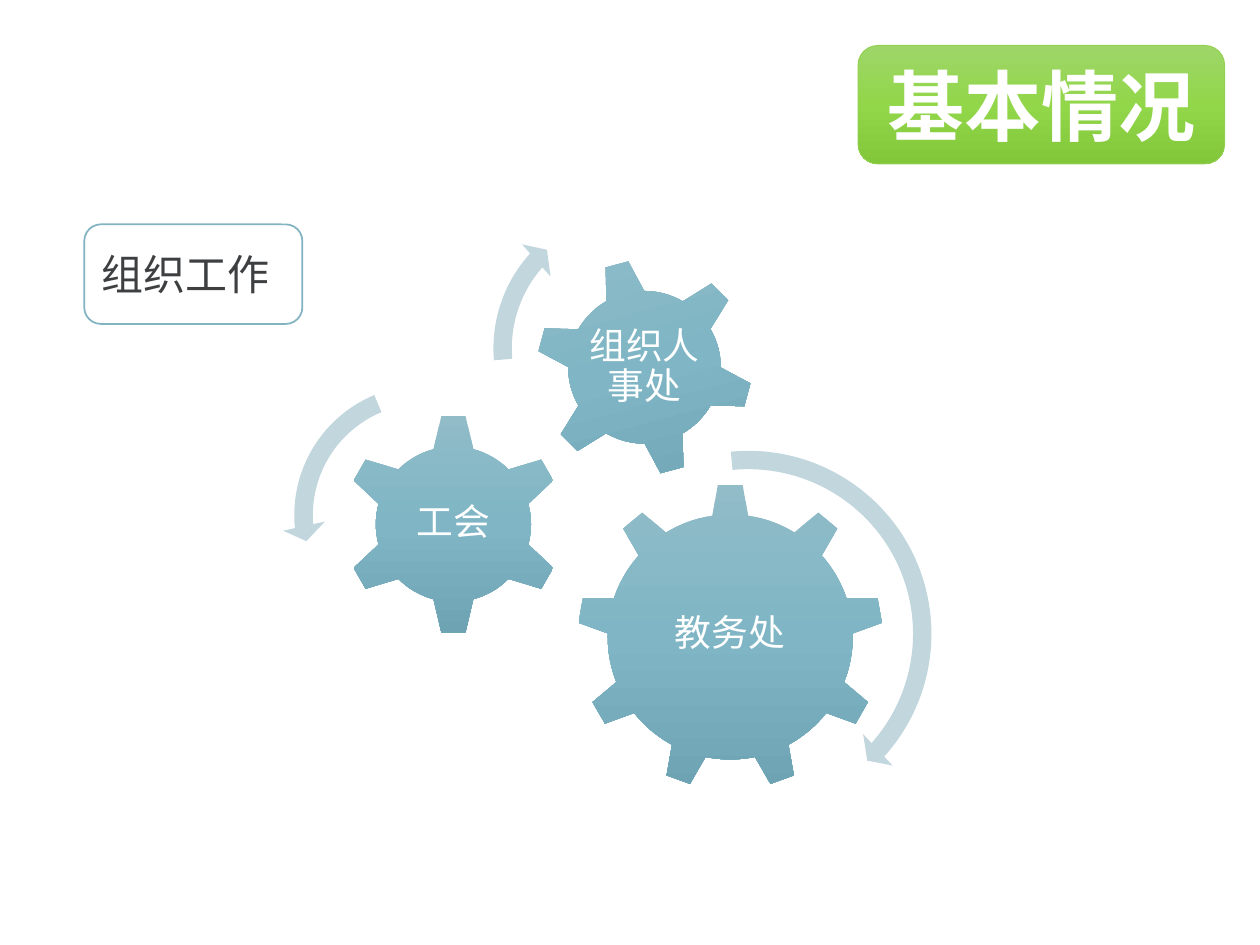
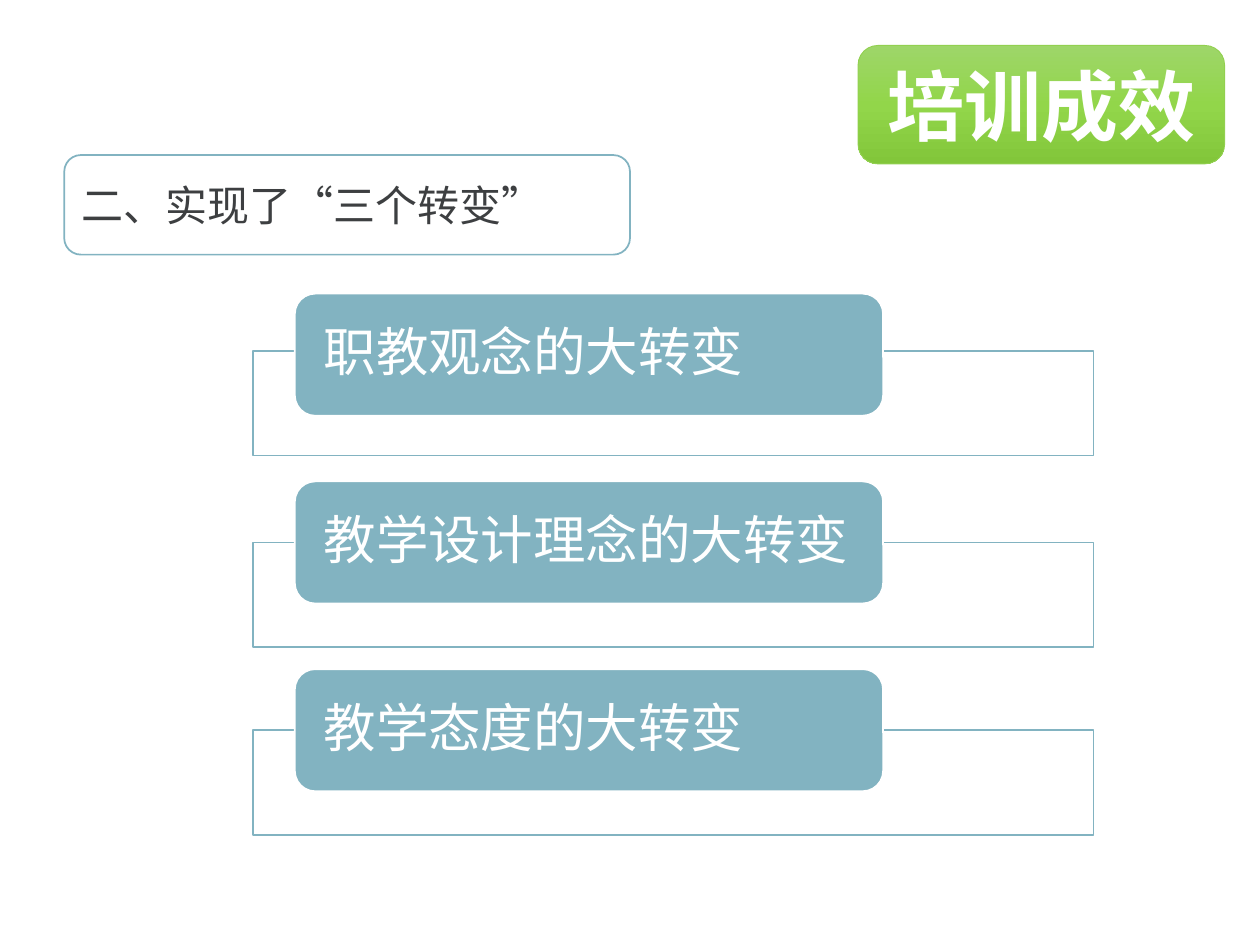
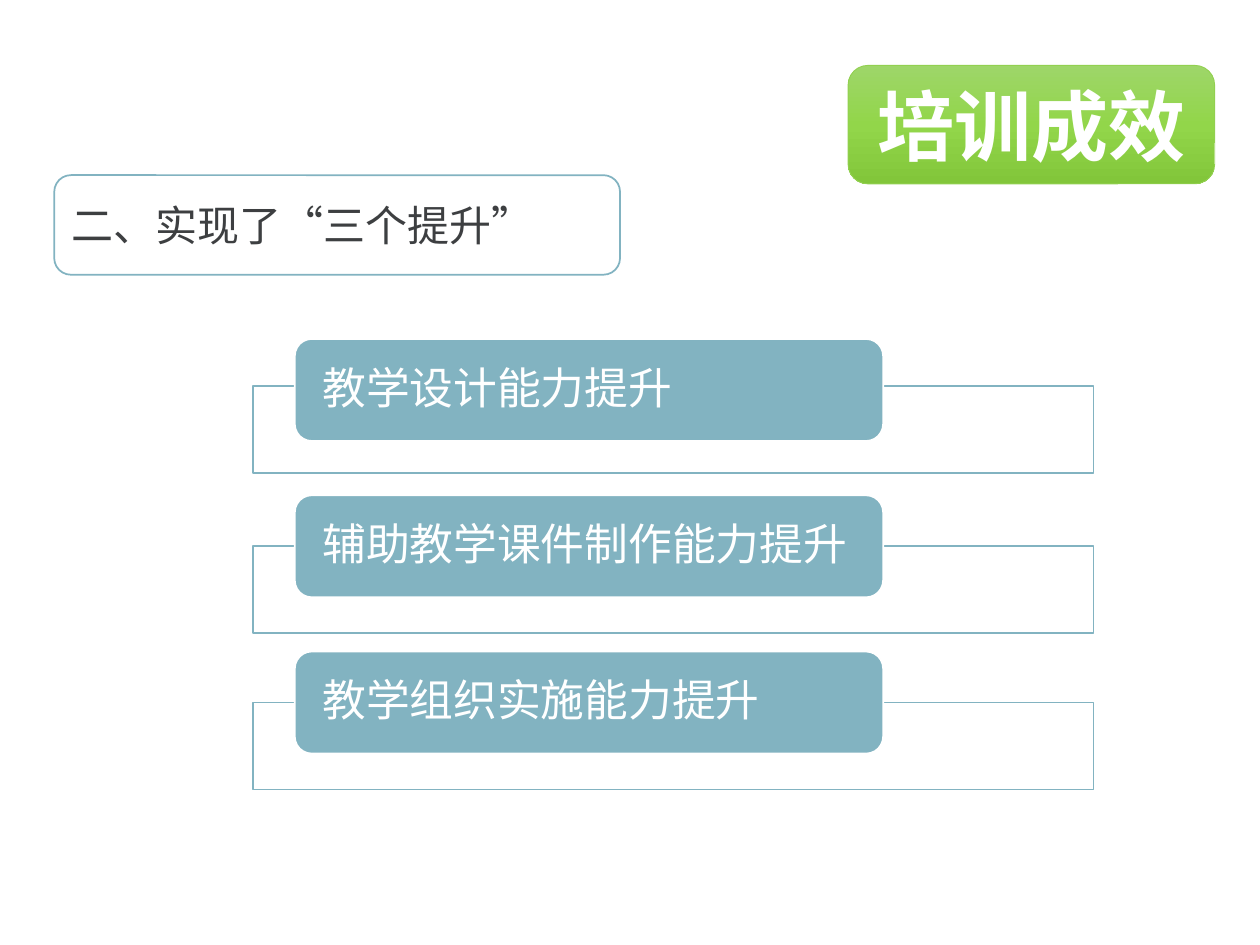
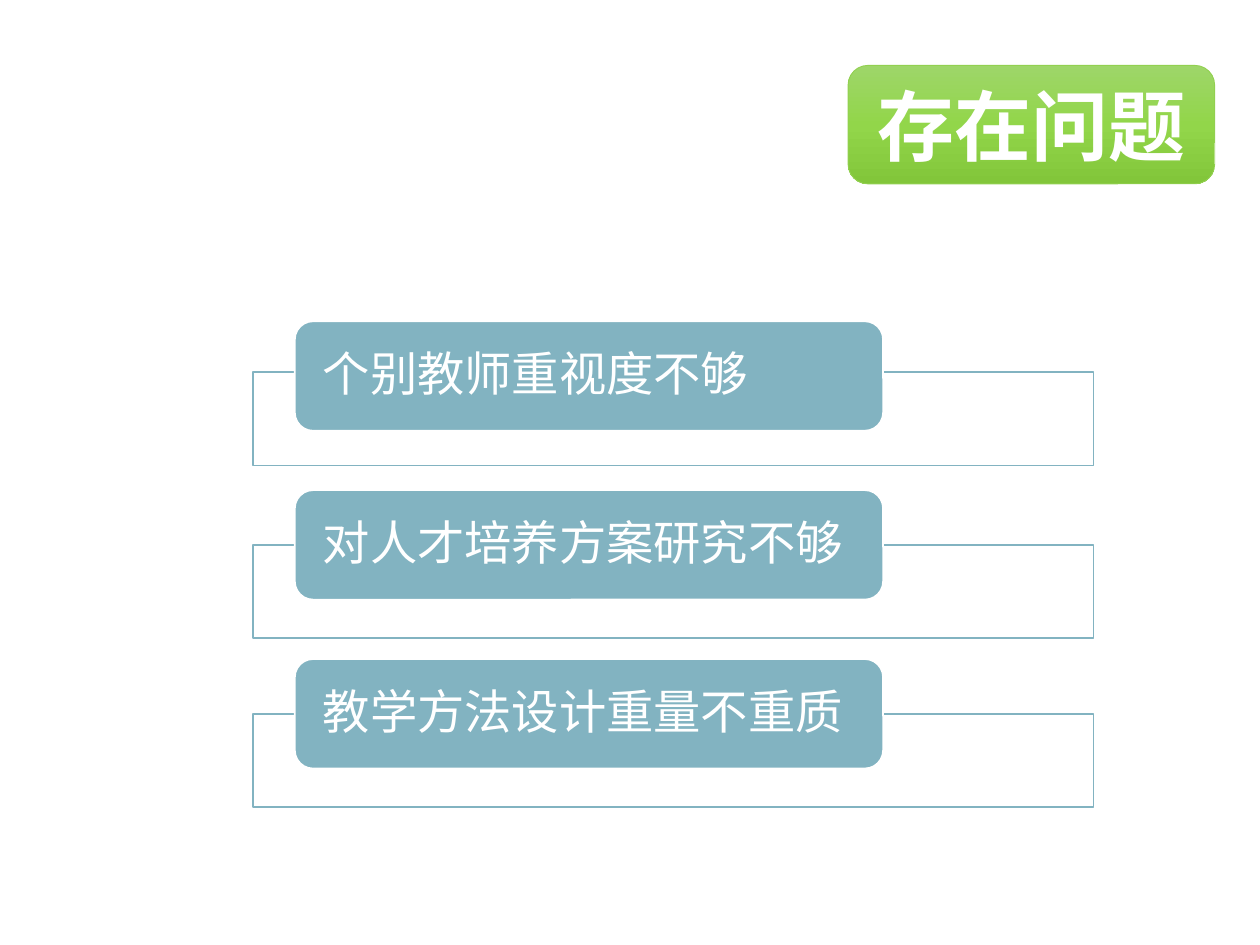
from copy import deepcopy

from lxml import etree
from pptx import Presentation
from pptx.dml.color import RGBColor
from pptx.enum.shapes import MSO_SHAPE
from pptx.enum.text import MSO_ANCHOR, MSO_AUTO_SIZE, PP_ALIGN
from pptx.oxml.ns import qn
from pptx.util import Pt

RECT, ROUND = MSO_SHAPE.RECTANGLE, MSO_SHAPE.ROUNDED_RECTANGLE
GEAR6, GEAR9 = MSO_SHAPE.GEAR_6, MSO_SHAPE.GEAR_9
RIGHT, LEFT = MSO_SHAPE.CIRCULAR_ARROW, MSO_SHAPE.LEFT_CIRCULAR_ARROW
START, MID = PP_ALIGN.LEFT, PP_ALIGN.CENTER
MIDDLE, FIXED = MSO_ANCHOR.MIDDLE, MSO_AUTO_SIZE.NONE

FONT = "Calibri"
HEX = {"white": "FFFFFF", "teal": "82B3C1", "pale": "C1D6DD",
       "green": "92D050", "ink": "3D3F41"}
SHADES = {"banner": ["9ED669", "92D64A", "82C63A"],
          "gear": ["91BCC8", "7FB5C4", "6DA3B2"]}


def draw(slide, kind, box, fill, line=None, width=1):
    """Add a preset shape; fill names a plain colour or a three-stop shade."""
    shape = slide.shapes.add_shape(kind, *[Pt(n) for n in box])
    shape.shadow.inherit = False
    if fill in SHADES:
        shape.fill.gradient()
        shape.fill.gradient_angle = 270
        stops = shape.element.spPr.find(".//" + qn("a:gsLst"))
        stops.append(deepcopy(stops[0]))
        for i, stop in enumerate(shape.fill.gradient_stops):
            stop.position = i / 2
            stop.color.rgb = RGBColor.from_string(SHADES[fill][i])
    else:
        shape.fill.solid()
        shape.fill.fore_color.rgb = RGBColor.from_string(HEX[fill])
    if line:
        shape.line.color.rgb = RGBColor.from_string(HEX[line])
        shape.line.width = Pt(width)
    else:
        shape.line.fill.background()
    return shape


def write(shape, text, size, color="white", align=MID, bold=False,
          pad=(7.2, 3.6), space=1):
    """Set one paragraph; pad holds the side and the top/bottom insets."""
    frame = shape.text_frame
    frame.word_wrap = True
    frame.auto_size = FIXED
    frame.vertical_anchor = MIDDLE
    frame.margin_left = frame.margin_right = Pt(pad[0])
    frame.margin_top = frame.margin_bottom = Pt(pad[1])
    frame.text = text
    para = frame.paragraphs[0]
    para.alignment = align
    para.line_spacing = space
    font = para.runs[0].font
    font.name, font.size, font.bold = FONT, Pt(size), bold
    font.color.rgb = RGBColor.from_string(HEX[color])


deck = Presentation()
deck.slide_width, deck.slide_height = Pt(720), Pt(540)

# Banner title and its place, then the label and its box
heads = [
    ("基本情况", (490.3, 26), "组织工作", (48.2, 128.2, 124.6, 56.9)),
    ("培训成效", (490.3, 26), "二、实现了“三个转变”", (36.7, 88.6, 323.3, 56.9)),
    ("培训成效", (484.6, 37.4), "二、实现了“三个提升”", (31, 100.1, 323.3, 56.9)),
    ("存在问题", (484.6, 37.4), None, None),
]
slides = []
for name, spot, label, box in heads:
    slide = deck.slides.add_slide(deck.slide_layouts[5])
    slides.append(slide)
    banner = draw(slide, ROUND, (*spot, 209.5, 67.7), "banner", "green", 0.5)
    title = slide.shapes.title
    title.left, title.top = banner.left, banner.top
    title.width, title.height = banner.width, banner.height
    write(title, name, 44, bold=True)
    banner.element.addnext(title.element)
    if label:
        write(draw(slide, ROUND, box, "white", "teal"), label, 24, "ink", START)

# Gears: kind, left, top, side, turn, text, text box
first = slides[0]
gears = [
    (GEAR9, 329.8, 276.5, 175, 0, "教务处", (365, 317.5, 104.4, 90)),
    (GEAR6, 195.8, 236.2, 126.7, 0, "工会", (227.5, 267.8, 63.4, 62.6)),
    (GEAR6, 306, 147.6, 124.6, 345, "组织人事处", (333.4, 175, 69.8, 69.8)),
]
for kind, left, top, side, turn, text, box in gears:
    gear = draw(first, kind, (left, top, side, side), "gear")
    gear.rotation = turn
    note = first.shapes.add_textbox(*[Pt(n) for n in box])
    write(note, text, 21, pad=(2, 2), space=0.9)

# Arrows: kind, left, top, side, adjustments
arrows = [
    (RIGHT, 316.1, 250.6, 223.2, (0.047, 2.99, 25.123, 158.696, 0.055)),
    (LEFT, 161.3, 213.1, 162.7, (0.065, 4.3, 104.891, 148.378, 0.075)),
    (RIGHT, 275, 111.6, 175, (0.06, 3.941, 133.138, 105.082, 0.07)),
]
for kind, left, top, side, turns in arrows:
    arrow = draw(first, kind, (left, top, side, side), "pale")
    for i, turn in enumerate(turns):
        arrow.adjustments[i] = turn

# Lists: first top, step, tab height, frame height, text size, items
lists = [
    (167.8, 107.3, 69.8, 59.8, 30,
     ["职教观念的大转变", "教学设计理念的大转变", "教学态度的大转变"]),
    (193.7, 89.3, 58.3, 49.7, 25,
     ["教学设计能力提升", "辅助教学课件制作能力提升", "教学组织实施能力提升"]),
    (183.6, 96.5, 62.6, 53.3, 27,
     ["个别教师重视度不够", "对人才培养方案研究不够", "教学方法设计重量不重质"]),
]
for slide, (top, step, tall, low, size, items) in zip(slides[1:], lists):
    for i, item in enumerate(items):
        y = top + i * step
        drop = tall / 2 - (0 if i else 2.2)
        frame = draw(slide, RECT, (144.7, y + drop, 480.2, low), "white", "teal")
        tint = frame.element.spPr.find(qn("a:solidFill"))[0]
        etree.SubElement(tint, qn("a:alpha"), val="90000")
        tab = draw(slide, ROUND, (168.5, y, 336.2, tall), "teal", "white")
        write(tab, item, size, align=START, pad=(13, 0), space=0.9)

deck.save("out.pptx")
